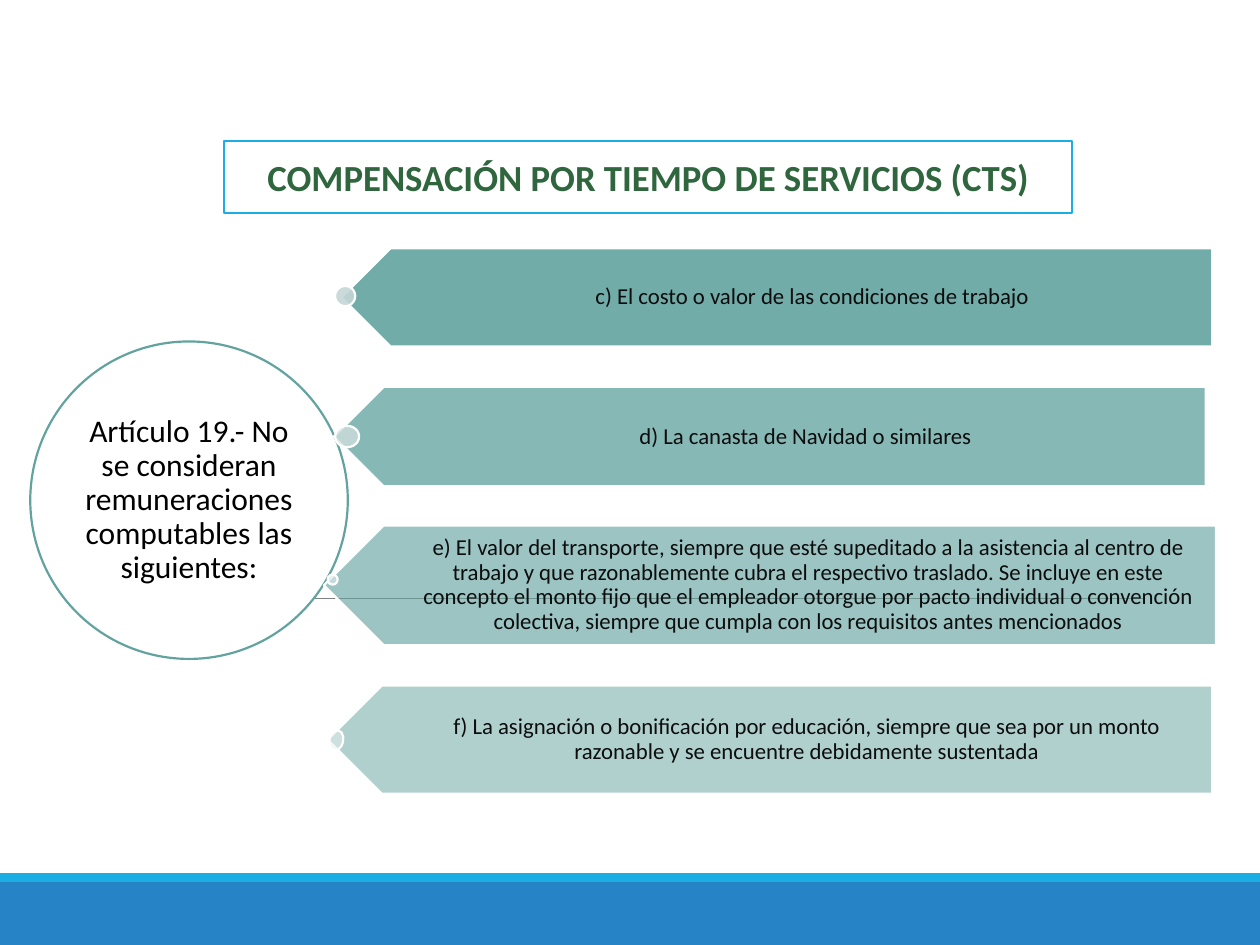
"""Build the slide on items left out of the CTS calculation."""
from dataclasses import dataclass

from pptx import Presentation
from pptx.dml.color import RGBColor
from pptx.enum.shapes import MSO_CONNECTOR as Link, MSO_SHAPE as Kind
from pptx.enum.text import MSO_ANCHOR as Anchor, MSO_AUTO_SIZE as Fit, PP_ALIGN as Align
from pptx.oxml.ns import qn
from pptx.oxml.xmlchemy import OxmlElement as Node
from pptx.util import Inches, Pt

FONT = "Calibri"
TEAL = "62A39F"
SKY = "1CADE4"
WHITE = "FFFFFF"
Box = tuple[float, float, float, float]


@dataclass
class Item:
    text: str
    box: Box
    alpha: int
    dot: Box
    tint: str
    turn: float = 0


ITEMS = [
    Item("c) El costo o valor de las condiciones de trabajo",
         (2.71, 1.97, 6.91, 0.78), 90, (2.66, 2.27, 0.16, 0.16), "C5D7D6"),
    Item("d) La canasta de Navidad o similares",
         (2.65, 3.07, 6.92, 0.79), 77, (2.66, 3.38, 0.19, 0.17), "D2E0DF"),
    Item("e) El valor del transporte, siempre que esté supeditado a la asistencia "
         "al centro de trabajo y que razonablemente cubra el respectivo traslado. "
         "Se incluye en este concepto el monto fijo que el empleador otorgue por "
         "pacto individual o convención colectiva, siempre que cumpla con los "
         "requisitos antes mencionados",
         (2.57, 4.17, 7.08, 0.95), 63, (2.6, 4.56, 0.08, 0.08), "DEE8E7"),
    Item("f) La asignación o bonificación por educación, siempre que sea por un "
         "monto razonable y se encuentre debidamente sustentada",
         (2.6, 5.44, 7.02, 0.86), 50, (2.59, 5.82, 0.16, 0.11), "EAF0F0", 281.2),
]


def color(code: str) -> RGBColor:
    return RGBColor.from_string(code)


def place(box: Box) -> list[Inches]:
    return [Inches(n) for n in box]


def paint(shape, fill: str, edge: str = "", alpha: int = 100) -> None:
    shape.fill.solid()
    shape.fill.fore_color.rgb = color(fill)
    if alpha < 100:
        node = Node("a:alpha")
        node.set("val", str(alpha * 1000))
        shape.element.spPr.find(qn("a:solidFill"))[0].append(node)
    if edge:
        shape.line.color.rgb = color(edge)
        shape.line.width = Pt(1.25)
    else:
        shape.line.fill.background()


def draw(slide, kind: Kind, box: Box, fill: str, edge: str = "",
         alpha: int = 100, turn: float = 0) -> None:
    shape = slide.shapes.add_shape(kind, *place(box))
    shape.shadow.inherit = False
    shape.rotation = turn
    paint(shape, fill, edge, alpha)


def write(shape, text: str, size: int, code: str, pad: Box,
          bold: bool = False, pitch: float = 0.9) -> None:
    frame = shape.text_frame
    frame.word_wrap = True
    frame.auto_size = Fit.NONE
    frame.vertical_anchor = Anchor.MIDDLE
    (frame.margin_left, frame.margin_top,
     frame.margin_right, frame.margin_bottom) = place(pad)
    para = frame.paragraphs[0]
    para.alignment = Align.CENTER
    para.line_spacing = pitch
    run = para.add_run()
    run.text = text
    font = run.font
    font.name, font.size, font.bold = FONT, Pt(size), bold
    font.color.rgb = color(code)


def head(slide) -> None:
    title = slide.shapes.title
    title.left, title.top, title.width, title.height = place((1.78, 1.12, 6.73, 0.57))
    geom = Node("a:prstGeom")
    geom.set("prst", "roundRect")
    geom.append(Node("a:avLst"))
    title.element.spPr.append(geom)
    paint(title, WHITE, SKY)
    write(title, "COMPENSACIÓN POR TIEMPO DE SERVICIOS (CTS)", 21, "2F663E",
          (0.1, 0.05, 0.1, 0.05), True, 1.0)


def rule(slide) -> None:
    y = Inches(4.75)
    line = slide.shapes.add_connector(Link.STRAIGHT, Inches(0.99), y, Inches(9.09), y)
    line.line.color.rgb = color("808080")
    line.line.width = Pt(0.5)
    line.element.spPr.append(Node("a:effectLst"))


def label(slide, box: Box, text: str, size: int, code: str, pad: Box) -> None:
    write(slide.shapes.add_textbox(*place(box)), text, size, code, pad)


def show(slide, item: Item) -> None:
    x, y, w, h = item.box
    inset = h / 4
    draw(slide, Kind.PENTAGON, item.box, TEAL, WHITE, item.alpha, 180)
    label(slide, (x + inset, y, w - inset, h), item.text, 13, "0D0D0D",
          (0.46, 0.05, 0.1, 0.05))
    draw(slide, Kind.OVAL, item.dot, item.tint, WHITE, item.alpha, item.turn)


def main() -> None:
    deck = Presentation()
    deck.slide_width, deck.slide_height = Inches(10), Inches(7.5)
    slide = deck.slides.add_slide(deck.slide_layouts[5])
    draw(slide, Kind.RECTANGLE, (0, 7, 10, 0.5), "2683C6")
    draw(slide, Kind.RECTANGLE, (0, 6.93, 10, 0.07), SKY)
    rule(slide)
    head(slide)
    draw(slide, Kind.OVAL, (0.24, 2.71, 2.52, 2.52), WHITE, TEAL)
    label(slide, (0.61, 3.08, 1.78, 1.78),
          "Artículo 19.- No se consideran remuneraciones computables las siguientes:",
          18, "000000", (0.03, 0.03, 0.03, 0.03))
    for item in ITEMS:
        show(slide, item)
    deck.save("out.pptx")


if __name__ == "__main__":
    main()
